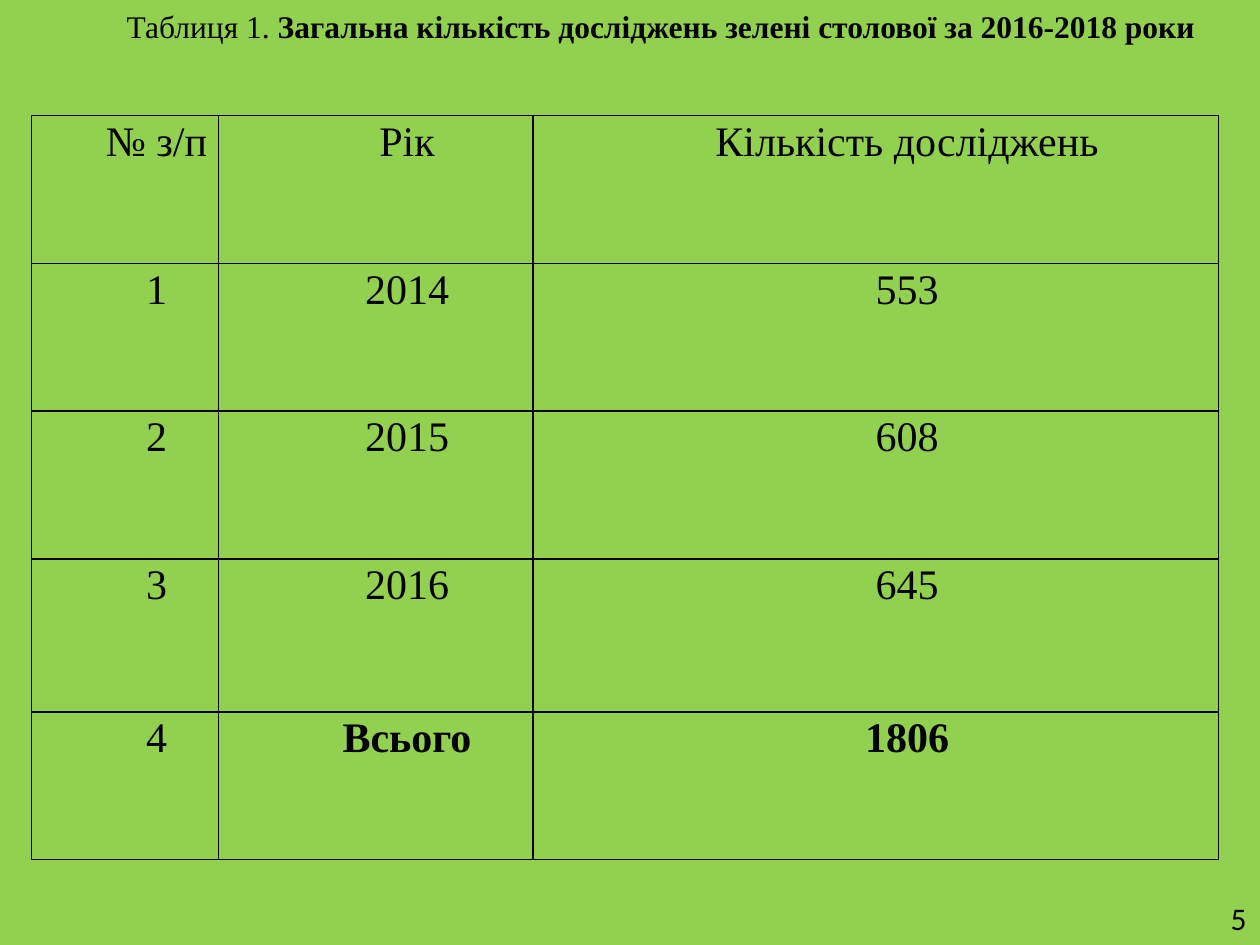
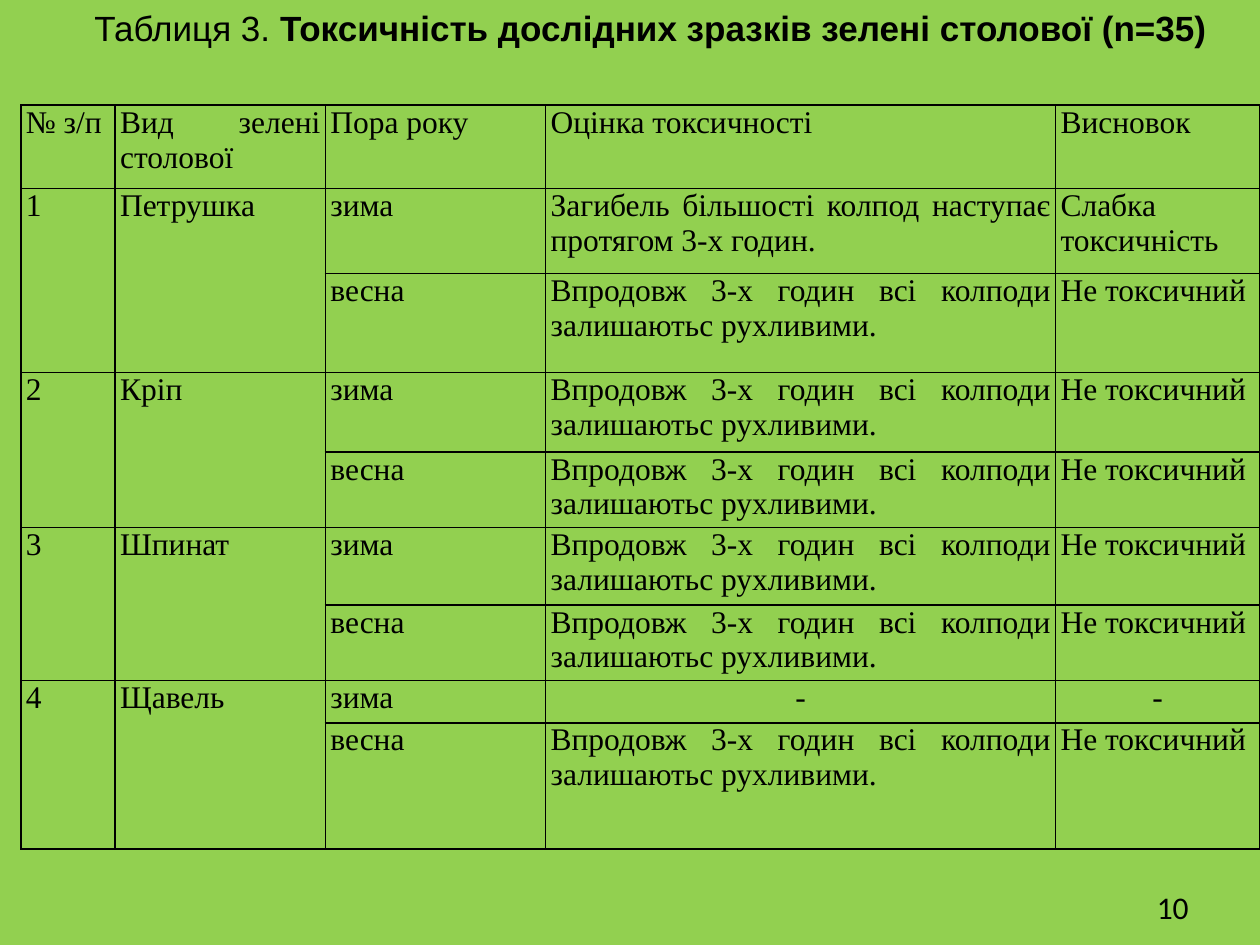
import pptx
import pptx.dml.color
import pptx.enum.text
import pptx.oxml
import pptx.oxml.ns
import pptx.util
from pptx.util import Cm, Pt

COLORS = {"background": "92D050", "text": "000000", "border": "000000"}
TABLE_FONT = "Times New Roman"
ALIGN = pptx.enum.text.PP_ALIGN
TEXT_COLOR = pptx.dml.color.RGBColor.from_string(COLORS["text"])
BACKGROUND_COLOR = pptx.dml.color.RGBColor.from_string(COLORS["background"])


def add_titled_slide(label, heading, font_name, size, title_width, number, number_left, number_top, number_width):
    """Add a slide with a plain label and bold heading in its title, and a page number."""
    slide = presentation.slides.add_slide(presentation.slide_layouts.get_by_name("Title Only"))

    title = slide.shapes.title
    title.left, title.top, title.width, title.height = Cm(0), Cm(0), Cm(title_width), Cm(1.85)
    frame = title.text_frame
    frame.auto_size = pptx.enum.text.MSO_AUTO_SIZE.NONE
    frame.vertical_anchor = pptx.enum.text.MSO_ANCHOR.TOP
    frame.margin_top = Cm(0.14)
    paragraph = frame.paragraphs[0]
    paragraph.alignment = ALIGN.CENTER
    paragraph._p.get_or_add_pPr().set("indent", str(Cm(1.25)))
    paragraph.font.name, paragraph.font.size = font_name, Pt(size)
    paragraph.font.color.rgb = TEXT_COLOR
    paragraph.add_run().text = label
    heading_run = paragraph.add_run()
    heading_run.text = heading
    heading_run.font.bold = True

    number_box = slide.shapes.add_textbox(Cm(number_left), Cm(number_top), Cm(number_width), Cm(1.02))
    number_box.text_frame.word_wrap = False
    number_box.text_frame.margin_right = 0
    paragraph = number_box.text_frame.paragraphs[0]
    paragraph.text = number
    paragraph.font.name, paragraph.font.size = "Calibri", Pt(18)
    paragraph.font.color.rgb = TEXT_COLOR
    return slide


def add_bordered_table(slide, left, top, column_widths, row_heights, rows, size, side_margin):
    """Add an unfilled table with thin borders on every cell."""
    table = slide.shapes.add_table(
        len(rows), len(column_widths), Cm(left), Cm(top), Cm(sum(column_widths)), Cm(sum(row_heights))
    ).table
    table.first_row = table.horz_banding = False
    for column, width in zip(table.columns, column_widths):
        column.width = Cm(width)
    for row, height, texts in zip(table.rows, row_heights, rows):
        row.height = Cm(height)
        for cell, text in zip(row.cells, texts):
            cell.margin_left = cell.margin_right = Cm(side_margin)
            cell.margin_top = cell.margin_bottom = 0
            paragraph = cell.text_frame.paragraphs[0]
            paragraph.text = text
            paragraph.font.name, paragraph.font.size = TABLE_FONT, Pt(size)
            paragraph.font.color.rgb = TEXT_COLOR
            properties = cell._tc.get_or_add_tcPr()
            for side in ("lnL", "lnR", "lnT", "lnB"):
                properties.append(pptx.oxml.parse_xml(
                    f'<a:{side} {pptx.oxml.ns.nsdecls("a")} w="{Pt(1)}"><a:solidFill>'
                    f'<a:srgbClr val="{COLORS["border"]}"/></a:solidFill></a:{side}>'
                ))
            cell.fill.background()
    return table


presentation = pptx.Presentation()
presentation.slide_width, presentation.slide_height = Cm(25.4), Cm(19.05)
background = presentation.slide_master.background.fill
background.solid()
background.fore_color.rgb = BACKGROUND_COLOR

# Number of studies by year
slide = add_titled_slide(
    "Таблиця 1.", " Загальна кількість досліджень зелені столової за 2016-2018 роки",
    TABLE_FONT, 18, 25.4, "5", 24.56, 18, 0.51,
)
study_rows = [
    ("№ з/п", "Рік", "Кількість досліджень"),
    ("1", "2014", "553"),
    ("2", "2015", "608"),
    ("3", "2016", "645"),
    ("4", "Всього", "1806"),
]
study_table = add_bordered_table(
    slide, 0.64, 2.33, [3.76, 6.34, 13.82], [2.98, 2.98, 2.98, 3.08, 2.98], study_rows, 24, 0.18
)
for cell in study_table.iter_cells():
    paragraph = cell.text_frame.paragraphs[0]
    paragraph.alignment = ALIGN.CENTER
    paragraph.line_spacing = 1.07
    paragraph._p.get_or_add_pPr().set("marL", str(Cm(1.27)))
    paragraph._p.get_or_add_pPr().set("indent", "0")
for column in (1, 2):
    study_table.cell(4, column).text_frame.paragraphs[0].font.bold = True

# Toxicity by plant and season
slide = add_titled_slide(
    "Таблиця 3. ", "Токсичність дослідних зразків зелені столової (n=35)",
    "Arial", 20, 24.98, "10", 23.07, 17.78, 1.17,
)
title_fill = slide.shapes.title.fill
title_fill.solid()
title_fill.fore_color.rgb = BACKGROUND_COLOR

harmless = ("Впродовж 3-х годин всі колподи залишаютьс рухливими.", "Не токсичний")
weakly_toxic = ("Загибель більшості колпод наступає протягом 3-х годин.", "Слабка токсичність")
untested = ("-", "-")
winter_results = {"Петрушка": weakly_toxic, "Кріп": harmless, "Шпинат": harmless, "Щавель": untested}

toxicity_rows = [("№ з/п", "Вид зелені столової", "Пора року", "Оцінка токсичності", "Висновок")]
for index, (plant, winter_result) in enumerate(winter_results.items(), start=1):
    toxicity_rows.append((str(index), plant, "зима", *winter_result))
    toxicity_rows.append(("", "", "весна", *harmless))

toxicity_table = add_bordered_table(
    slide, 0.42, 2.12, [1.9, 4.24, 4.44, 10.28, 4.11],
    [1.68, 1.71, 2, 1.6, 1.52, 1.56, 1.52, 0.85, 2.54], toxicity_rows, 18, 0.1,
)
for cell in toxicity_table.iter_cells():
    paragraph = cell.text_frame.paragraphs[0]
    paragraph.alignment = ALIGN.CENTER if cell.text == "-" else ALIGN.JUSTIFY
for row in range(1, len(toxicity_rows), 2):
    for column in (0, 1):
        toxicity_table.cell(row, column).merge(toxicity_table.cell(row + 1, column))

presentation.save("out.pptx")
